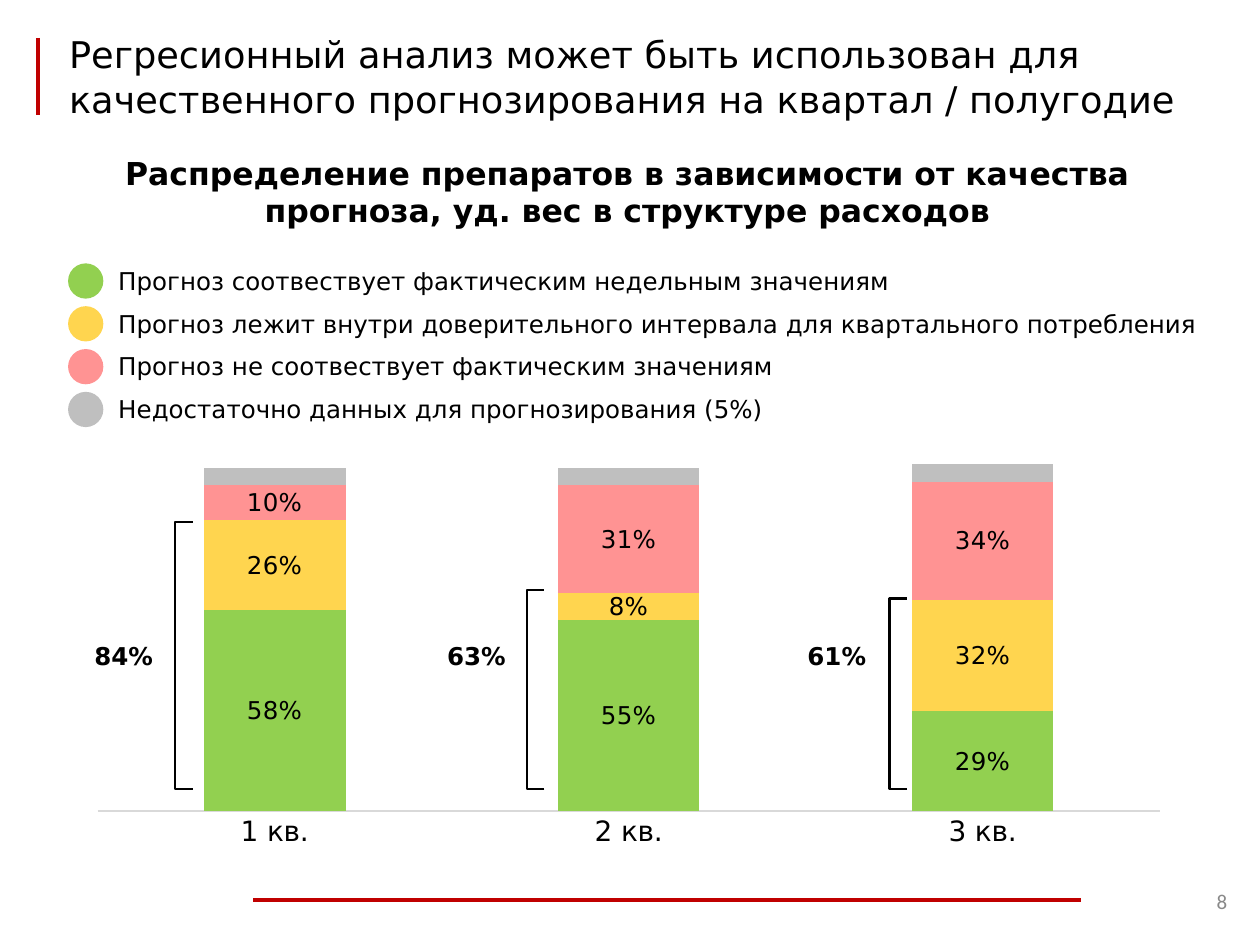
from lxml import etree
from pptx import Presentation
from pptx import util as u
from pptx.chart.data import CategoryChartData
from pptx.dml.color import RGBColor
from pptx.enum import chart as ch, shapes, text
from pptx.oxml.ns import qn

RED = RGBColor(0xC0, 0x00, 0x00)
BLACK = RGBColor(0x00, 0x00, 0x00)
GREEN = RGBColor(0x92, 0xD0, 0x50)
YELLOW = RGBColor(0xFF, 0xD5, 0x4F)
PINK = RGBColor(0xFF, 0x93, 0x93)
GREY = RGBColor(0xBF, 0xBF, 0xBF)
PALE = RGBColor(0xD9, 0xD9, 0xD9)
DIM = RGBColor(0x89, 0x89, 0x89)


class Board:
    """Holds the style and the current slide."""
    face = "DejaVu Sans"

    def __init__(self, slide):
        self.slide = slide
        self.shapes = slide.shapes

    def box(self, place):
        return [u.Inches(n) for n in place]

    def style(self, font, size, color=BLACK, bold=False, face=None):
        font.name = face or self.face
        font.size = u.Pt(size)
        font.bold = bold
        font.color.rgb = color

    def label(self, words, place, size=14, align=text.PP_ALIGN.LEFT,
              anchor=text.MSO_ANCHOR.TOP, **look):
        frame = self.shapes.add_textbox(*self.box(place)).text_frame
        frame.word_wrap = True
        frame.vertical_anchor = anchor
        para = frame.paragraphs[0]
        para.text = words
        para.alignment = align
        self.style(para.font, size, **look)

    def rule(self, x1, y1, x2, y2):
        line = self.shapes.add_connector(
            shapes.MSO_CONNECTOR.STRAIGHT, *self.box((x1, y1, x2, y2)))
        line.line.color.rgb = RED
        line.line.width = u.Pt(2.25)
        etree.SubElement(line._element.spPr, qn("a:effectLst"))

    def dot(self, place, color):
        dot = self.shapes.add_shape(shapes.MSO_SHAPE.OVAL, *self.box(place))
        dot.shadow.inherit = False
        dot.fill.solid()
        dot.fill.fore_color.rgb = color
        dot.line.fill.background()

    def bracket(self, place):
        mark = self.shapes.add_shape(
            shapes.MSO_SHAPE.LEFT_BRACKET, *self.box(place))
        mark.adjustments[0] = 0
        mark.shadow.inherit = False
        mark.fill.background()
        mark.line.color.rgb = BLACK
        mark.line.width = u.Pt(1.25)

    def stack(self, place, cats, rows):
        data = CategoryChartData(number_format="0%")
        data.categories = cats
        for n, (vals, _, _) in enumerate(rows, 1):
            data.add_series(f"Series {n}", vals)
        chart = self.shapes.add_chart(
            ch.XL_CHART_TYPE.COLUMN_STACKED, *self.box(place), data).chart
        chart.has_legend = chart.has_title = False
        self.style(chart.font, 10)

        # Axes
        axis = chart.category_axis
        axis.major_tick_mark = ch.XL_TICK_MARK.NONE
        axis.format.line.color.rgb = PALE
        axis.format.line.width = u.Pt(0.75)
        self.style(axis.tick_labels.font, 16)
        axis = chart.value_axis
        axis.minimum_scale, axis.maximum_scale = 0, 1
        axis.has_major_gridlines = False
        axis.major_tick_mark = ch.XL_TICK_MARK.NONE
        axis.tick_label_position = ch.XL_TICK_LABEL_POSITION.NONE
        axis.format.line.fill.background()

        # Bars
        plot = chart.plots[0]
        plot.gap_width, plot.overlap = 150, 100
        plot.vary_by_categories = False
        for bar, (_, color, shown) in zip(plot.series, rows):
            bar.format.fill.solid()
            bar.format.fill.fore_color.rgb = color
            if shown:
                tags = bar.data_labels
                tags.show_value = True
                tags.number_format = "0%"
                tags.number_format_is_linked = False
                self.style(tags.font, 14)
        self.inset(chart, x=0.02, y=0.16, w=0.96, h=0.74)

    def inset(self, chart, **parts):
        """Fix the inner plot area as fractions of the chart."""
        area = chart._chartSpace.chart.plotArea
        for old in area.findall(qn("c:layout")):
            area.remove(old)
        layout = etree.Element(qn("c:layout"))
        area.insert(0, layout)
        manual = etree.SubElement(layout, qn("c:manualLayout"))
        pairs = [("layoutTarget", "inner"), ("xMode", "edge"),
                 ("yMode", "edge"), *parts.items()]
        for tag, val in pairs:
            etree.SubElement(manual, qn(f"c:{tag}")).set("val", str(val))


def main():
    deck = Presentation()
    deck.slide_width, deck.slide_height = u.Inches(10), u.Inches(7.5)
    board = Board(deck.slides.add_slide(deck.slide_layouts[6]))
    mid = text.MSO_ANCHOR.MIDDLE

    # Frame lines, page number and title
    board.rule(2.01, 7.14, 8.58, 7.14)
    board.rule(0.3, 0.3, 0.3, 0.91)
    board.label("8", (9.38, 6.95, 0.46, 0.4), 12, text.PP_ALIGN.RIGHT, mid,
                color=DIM, face="Calibri")
    board.label("Регресионный анализ может быть использован для "
                "качественного прогнозирования на квартал / полугодие",
                (0.45, 0.3, 9.27, 0.61), 21, anchor=mid)

    # Chart
    board.stack((0.6, 3.09, 8.78, 3.72), ["1 кв.", "2 кв.", "3 кв."], [
        ((0.58, 0.55, 0.29), GREEN, True),
        ((0.26, 0.08, 0.32), YELLOW, True),
        ((0.10, 0.31, 0.34), PINK, True),
        ((0.05, 0.05, 0.05), GREY, False),
    ])
    board.label("Распределение препаратов в зависимости от качества "
                "прогноза, уд. вес в структуре расходов",
                (0.6, 1.17, 8.76, 0.71), 18, text.PP_ALIGN.CENTER, bold=True)

    # Legend
    keys = [
        (GREEN, "Прогноз соотвествует фактическим недельным значениям"),
        (YELLOW, "Прогноз лежит внутри доверительного интервала "
                 "для квартального потребления"),
        (PINK, "Прогноз не соотвествует фактическим значениям"),
        (GREY, "Недостаточно данных для прогнозирования (5%)"),
    ]
    for n, (color, words) in enumerate(keys):
        top = 2.06 + 0.34 * n
        board.dot((0.54, top + 0.03, 0.28, 0.28), color)
        board.label(words, (0.84, top, 9.1, 0.34))

    # Brackets with the sum of the two lower bars
    base = 6.26
    sums = [("84%", 0.65, 1.39, 4.14), ("63%", 3.45, 4.18, 4.68),
            ("61%", 6.31, 7.06, 4.75)]
    for words, left, x, top in sums:
        board.bracket((x, top, 0.14, base - top))
        board.label(words, (left, 5.04, 0.87, 0.34), bold=True)

    deck.save("out.pptx")


if __name__ == "__main__":
    main()
